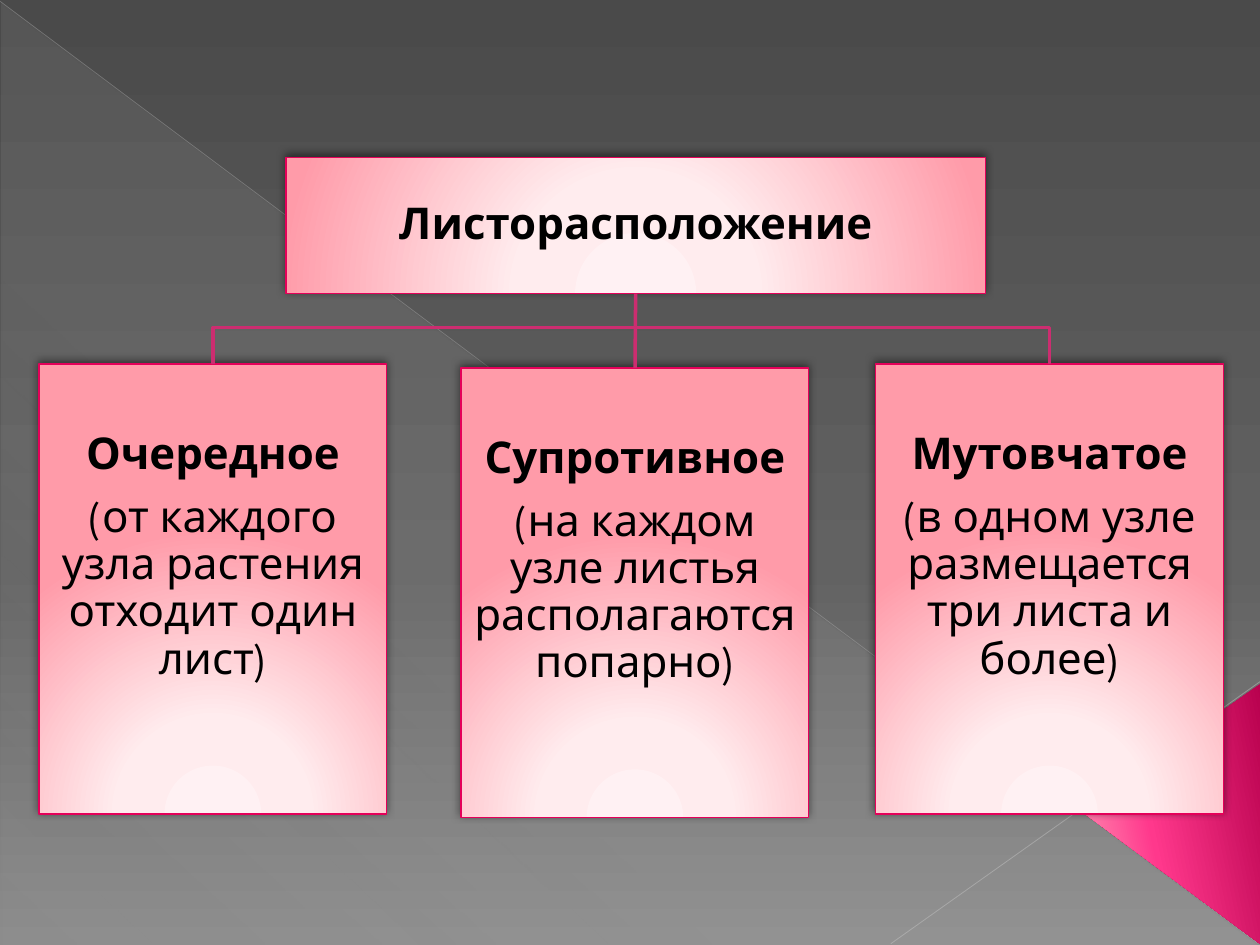
from dataclasses import dataclass

from lxml.etree import SubElement
from pptx import Presentation
from pptx.dml.color import RGBColor
from pptx.enum.shapes import MSO_CONNECTOR, MSO_SHAPE
from pptx.enum.text import MSO_ANCHOR, MSO_AUTO_SIZE, PP_ALIGN
from pptx.oxml import parse_xml
from pptx.oxml.ns import nsdecls, qn
from pptx.util import Inches, Pt


@dataclass(frozen=True)
class Theme:
    """Colours, gradients and type sizes of the slide."""

    font: str = "League Spartan"
    text_size: float = 25
    text: str = "000000"
    branch: str = "CC2D70"
    border: str = "E40059"
    backdrop: tuple = ((0, "4A4A4A", 100), (60, "626262", 100), (100, "8C8C8C", 100))
    veil: tuple = ((0, "D2D2D2", 10), (70, "D2D2D2", 8), (100, "D2D2D2", 1))
    corner: tuple = ((0, "B8014E", 100), (60, "FF388C", 100), (100, "FF9CB9", 100))
    card: tuple = ((0, "FFF1F3", 100), (34, "FFECEE", 100), (100, "FF9BA9", 100))


RADIAL = (
    '<a:path path="circle">'
    '<a:fillToRect l="50000" t="155000" r="50000" b="-55000"/></a:path>'
)


def linear(degrees):
    """Return the direction element of a linear gradient."""
    return f'<a:lin ang="{degrees * 60000}" scaled="0"/>'


class SlideBuilder:
    """Draws styled elements on the current slide."""

    def __init__(self, slide, theme):
        self.slide = slide
        self.theme = theme

    def gradient(self, fill, owner, stops, direction):
        """Give the owner of a fill a gradient."""
        fill.solid()
        solid = owner.find(".//" + qn("a:solidFill"))
        stop_xml = "".join(
            f'<a:gs pos="{position * 1000}"><a:srgbClr val="{color}">'
            f'<a:alpha val="{alpha * 1000}"/></a:srgbClr></a:gs>'
            for position, color, alpha in stops
        )
        solid.getparent().replace(solid, parse_xml(
            f'<a:gradFill {nsdecls("a")} rotWithShape="1">'
            f"<a:gsLst>{stop_xml}</a:gsLst>{direction}</a:gradFill>"
        ))

    def background(self):
        """Fill the slide background."""
        self.gradient(self.slide.background.fill, self.slide.element,
                      self.theme.backdrop, linear(90))

    def decoration(self, preset, box, stops, degrees):
        """Add a borderless gradient shape."""
        shape = self.slide.shapes.add_shape(preset, *map(Inches, box))
        shape.shadow.inherit = False
        self.gradient(shape.fill, shape.element.spPr, stops, linear(degrees))
        shape.line.fill.background()
        return shape

    def line(self, start, end, color, width, alpha=100):
        """Add a straight line."""
        connector = self.slide.shapes.add_connector(
            MSO_CONNECTOR.STRAIGHT, *map(Inches, (*start, *end)))
        connector.line.color.rgb = RGBColor.from_string(color)
        connector.line.width = Pt(width)
        if alpha < 100:
            tint = connector.element.spPr.find(".//" + qn("a:srgbClr"))
            SubElement(tint, qn("a:alpha"), val=str(alpha * 1000))
        SubElement(connector.element.spPr, qn("a:effectLst"))
        return connector

    def branch(self, parent, child, bend):
        """Add a right-angled branch from a parent card to a child card."""
        start, end = (card.left + card.width // 2 for card in (parent, child))
        bottom = parent.top + parent.height
        outline = self.slide.shapes.build_freeform(start, bottom)
        outline.add_line_segments(
            [(start, Inches(bend)), (end, Inches(bend)), (end, child.top)], close=False)
        shape = outline.convert_to_shape()
        shape.shadow.inherit = False
        shape.fill.background()
        shape.line.color.rgb = RGBColor.from_string(self.theme.branch)
        shape.line.width = Pt(2)

    def trunk(self, parent, child):
        """Join a parent card straight down to a child card."""
        connector = self.line((0, 0), (1, 1), self.theme.branch, 2)
        connector.begin_connect(parent, 2)
        connector.end_connect(child, 0)

    def style_card(self, card, heading, detail=None, bottom_inset=0.02):
        """Apply the card look and write its heading and detail."""
        self.gradient(card.fill, card.element.spPr, self.theme.card, RADIAL)
        card.line.color.rgb = RGBColor.from_string(self.theme.border)
        card.line.width = Pt(0.75)
        card.shadow.inherit = False
        card.element.spPr.find(qn("a:effectLst")).append(parse_xml(
            f'<a:outerShdw {nsdecls("a")} blurRad="{Pt(5)}" dist="{Pt(2)}" '
            f'dir="{245 * 60000}" rotWithShape="0"><a:srgbClr val="000000">'
            '<a:alpha val="50000"/></a:srgbClr></a:outerShdw>'
        ))
        frame = card.text_frame
        frame.word_wrap = True
        frame.auto_size = MSO_AUTO_SIZE.NONE
        frame.vertical_anchor = MSO_ANCHOR.MIDDLE
        frame.margin_left = frame.margin_right = frame.margin_top = Inches(0.02)
        frame.margin_bottom = Inches(bottom_inset)
        frame.text = f"{heading}\n{detail}" if detail else heading
        for index, paragraph in enumerate(frame.paragraphs):
            paragraph.alignment = PP_ALIGN.CENTER
            paragraph.line_spacing = 0.9
            paragraph.space_before = Pt(9 if index else 0)
            paragraph.font.name = self.theme.font
            paragraph.font.size = Pt(self.theme.text_size)
            paragraph.font.bold = index == 0
            paragraph.font.color.rgb = RGBColor.from_string(self.theme.text)

    def title_card(self, box, heading):
        """Turn the title placeholder into the root card."""
        title = self.slide.shapes.title
        title.left, title.top, title.width, title.height = map(Inches, box)
        self.slide.shapes.element.append(title.element)
        self.style_card(title, heading)
        return title

    def type_card(self, box, heading, detail):
        """Add a card for one leaf arrangement."""
        card = self.slide.shapes.add_shape(MSO_SHAPE.RECTANGLE, *map(Inches, box))
        self.style_card(card, heading, detail, bottom_inset=0.52)
        return card


def main():
    """Build the leaf arrangement slide."""
    presentation = Presentation()
    presentation.slide_width, presentation.slide_height = Inches(10), Inches(7.5)
    theme = Theme()
    builder = SlideBuilder(
        presentation.slides.add_slide(presentation.slide_layouts[5]), theme)

    builder.background()
    builder.decoration(MSO_SHAPE.RIGHT_TRIANGLE, (0.01, 0.02, 9.98, 7.48), theme.veil, 133)
    builder.line((0, 0.01), (9.99, 7.49), "BFBFBF", 0.39, 35)
    builder.line((10, 5.41), (7.07, 7.49), "C6C6C6", 0.47, 45)
    corner = builder.decoration(
        MSO_SHAPE.ISOSCELES_TRIANGLE, (8.26, 5.75, 2.07, 1.42), theme.corner, 258)
    corner.rotation = 270
    corner.adjustments[0] = 0.51

    root = builder.title_card((2.27, 1.25, 5.55, 1.08), "Листорасположение")
    arrangements = (
        (0.31, 2.89, "Очередное", "(от каждого узла растения отходит один лист)"),
        (3.66, 2.92, "Супротивное", "(на каждом узле листья располагаются попарно)"),
        (6.95, 2.89, "Мутовчатое", "(в одном узле размещается три листа и более)"),
    )
    alternate, opposite, whorled = (
        builder.type_card((left, top, 2.76, 3.57), heading, detail)
        for left, top, heading, detail in arrangements
    )
    builder.branch(root, whorled, 2.6)
    builder.trunk(root, opposite)
    builder.branch(root, alternate, 2.6)

    presentation.save("out.pptx")


if __name__ == "__main__":
    main()
